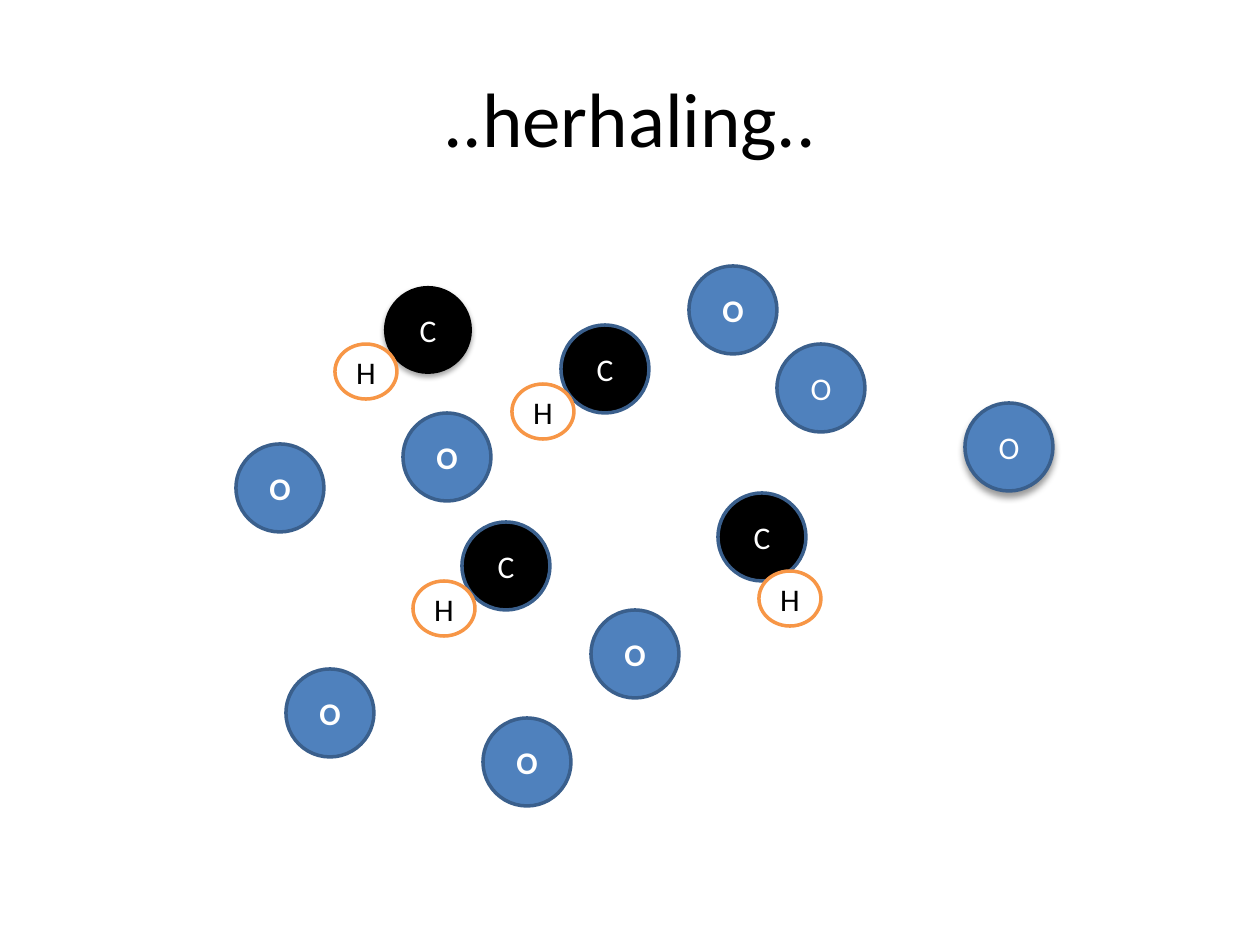
from lxml.etree import SubElement
from pptx import Presentation
from pptx.dml.color import RGBColor
from pptx.enum.shapes import MSO_SHAPE
from pptx.enum.text import MSO_ANCHOR, PP_ALIGN
from pptx.oxml.ns import qn
from pptx.util import Pt

EMU_PER_PX = 914400 / 126
FONT = "Calibri"
BLACK = RGBColor(0x00, 0x00, 0x00)
WHITE = RGBColor(0xFF, 0xFF, 0xFF)
BLUE = RGBColor(0x4F, 0x81, 0xBD)
DARK_BLUE = RGBColor(0x3A, 0x5F, 0x8C)
ORANGE = RGBColor(0xF7, 0x96, 0x46)

BIG = (88, 88)
SMALL = (62, 55)

# Carbon: left, top, offset of its hydrogen, outline, shadow (alpha %, blur pt, distance pt)
CARBONS = [
    (561, 325, (-49, 59), DARK_BLUE, None),
    (718, 493, (41, 78), DARK_BLUE, None),
    (384, 286, (-49, 58), None, (35, 3.1, 1.8)),
    (462, 522, (-49, 59), DARK_BLUE, None),
]
# Oxygen: left, top, bold, shadow
OXYGENS = [
    (777, 344, False, None),
    (286, 669, True, None),
    (965, 403, False, (40, 4, 3)),
    (689, 266, True, None),
    (236, 444, True, None),
    (591, 610, True, None),
    (403, 413, True, None),
    (483, 718, True, None),
]


def px(n):
    return round(n * EMU_PER_PX)


def format_text(tf, text, size, color, bold=False):
    tf.text = text
    tf.vertical_anchor = MSO_ANCHOR.MIDDLE
    p = tf.paragraphs[0]
    p.alignment = PP_ALIGN.CENTER
    p.font.name = FONT
    p.font.size = Pt(size)
    p.font.bold = bold
    p.font.color.rgb = color


def add_shadow(sp, alpha, blur, distance):
    effects = sp._element.spPr.find(qn("a:effectLst"))
    shadow = SubElement(effects, qn("a:outerShdw"), blurRad=str(Pt(blur)),
                        dist=str(Pt(distance)), dir="5400000", rotWithShape="0")
    color = SubElement(shadow, qn("a:srgbClr"), val=str(BLACK))
    SubElement(color, qn("a:alpha"), val=str(alpha * 1000))


def add_atom(s, symbol, left, top, size, fill, line, color, bold=False, shadow=None):
    sp = s.shapes.add_shape(MSO_SHAPE.OVAL, px(left), px(top), *map(px, size))
    sp.fill.solid()
    sp.fill.fore_color.rgb = fill
    if line is None:
        sp.line.fill.background()
    else:
        sp.line.color.rgb = line
        sp.line.width = Pt(2)
    sp.shadow.inherit = False
    if shadow:
        add_shadow(sp, *shadow)
    tf = sp.text_frame
    tf.margin_left = tf.margin_right = tf.margin_top = tf.margin_bottom = 0
    format_text(tf, symbol, 18, color, bold)


def add_title(s, text):
    title = s.shapes.title
    title.left, title.top, title.width, title.height = map(px, (63, 38, 1134, 158))
    format_text(title.text_frame, text, 44, BLACK)


def main():
    prs = Presentation()
    prs.slide_width, prs.slide_height = px(1260), px(945)
    s = prs.slides.add_slide(prs.slide_layouts[5])
    add_title(s, "..herhaling..")

    # Carbon atoms, each with one hydrogen in front
    for left, top, (dx, dy), line, shadow in CARBONS:
        add_atom(s, "C", left, top, BIG, BLACK, line, WHITE, shadow=shadow)
        add_atom(s, "H", left + dx, top + dy, SMALL, WHITE, ORANGE, BLACK)

    # Loose oxygen atoms
    for left, top, bold, shadow in OXYGENS:
        add_atom(s, "O", left, top, BIG, BLUE, DARK_BLUE, WHITE, bold, shadow)

    prs.save("out.pptx")


if __name__ == "__main__":
    main()
